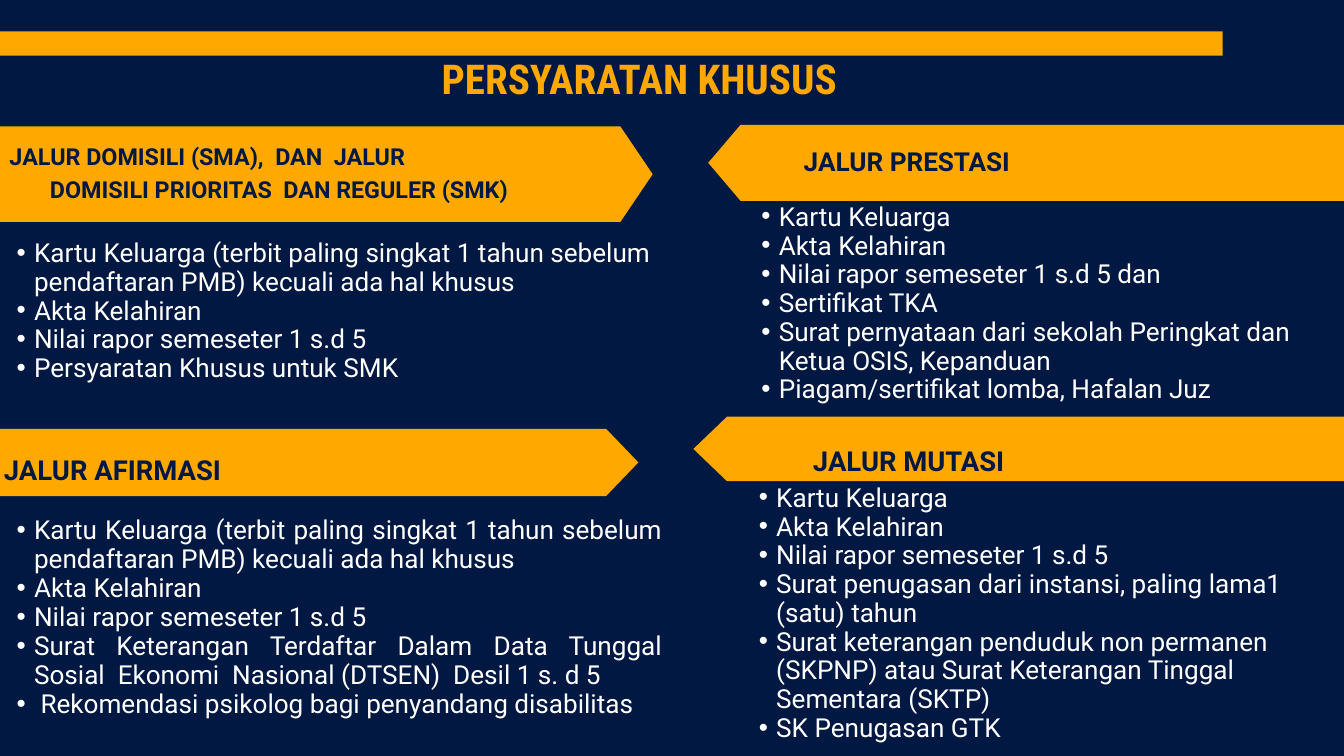
import pptx
import pptx.util
import pptx.dml.color
import pptx.enum.shapes
import pptx.enum.text
import pptx.oxml.ns
import lxml.etree

Cm, Pt = pptx.util.Cm, pptx.util.Pt
ALIGN = pptx.enum.text.PP_ALIGN
NAVY, AMBER, WHITE = "001842", "FFA800", "FFFFFF"
INDENT = 0.66


def rgb(color):
    return pptx.dml.color.RGBColor.from_string(color)


def paint(sp, color):
    sp.shadow.inherit = False
    sp.fill.solid()
    sp.fill.fore_color.rgb = rgb(color)
    sp.line.fill.background()


def prepare_frame(sp):
    tf = sp.text_frame
    tf.word_wrap = True
    tf.auto_size = pptx.enum.text.MSO_AUTO_SIZE.NONE
    tf.vertical_anchor = pptx.enum.text.MSO_ANCHOR.TOP
    tf.margin_left = tf.margin_top = tf.margin_right = tf.margin_bottom = 0
    return tf


def add_line(tf, index, text, size, spacing, color, font="Roboto", bold=False):
    p = tf.paragraphs[0] if index == 0 else tf.add_paragraph()
    p.alignment = ALIGN.LEFT
    p.line_spacing = Pt(spacing)
    p.space_before = Pt(0)
    r = p.add_run()
    r.text = text
    r.font.name, r.font.size, r.font.bold = font, Pt(size), bold
    r.font.color.rgb = rgb(color)
    return p


def set_indent(p, left, first):
    pPr = p._p.get_or_add_pPr()
    pPr.set("marL", str(Cm(left)))
    pPr.set("indent", str(Cm(first)))
    return pPr


def add_header(s, box, title_box):
    # Top bar
    bar = s.shapes.add_shape(pptx.enum.shapes.MSO_SHAPE.RECTANGLE, *map(Cm, box))
    paint(bar, AMBER)
    # Title
    title = s.shapes.title
    title.left, title.top, title.width, title.height = map(Cm, title_box)
    add_line(prepare_frame(title), 0, "PERSYARATAN KHUSUS", 44, 45.3, AMBER,
             "Roboto Condensed", True)


def add_banner(s, box, tip):
    x, y, w, h = box
    points = [(x + w - tip, y), (x + tip, y), (x, y + h / 2),
              (x + tip, y + h), (x + w - tip, y + h), (x + w, y + h / 2)]
    points = [(Cm(px), Cm(py)) for px, py in points]
    builder = s.shapes.build_freeform(*points[0], scale=1.0)
    builder.add_line_segments(points[1:], close=True)
    paint(builder.convert_to_shape(), AMBER)


def add_section(s, box, heading, heading_box, size, spacing, items, list_box,
                list_spacing=30.8, align=ALIGN.LEFT, tip=1.22):
    """Heading and list boxes are measured from the banner's top left."""
    x, y = box[:2]

    def text_frame(dx, dy, w, h):
        return prepare_frame(s.shapes.add_textbox(Cm(x + dx), Cm(y + dy), Cm(w), Cm(h)))

    add_banner(s, box, tip)
    # Heading, with any later line indented
    tf = text_frame(*heading_box)
    for i, text in enumerate(heading):
        p = add_line(tf, i, text, size, spacing, NAVY, bold=True)
        if i:
            set_indent(p, 1.53, 0)
    # Bulleted requirements
    tf = text_frame(*list_box)
    for i, text in enumerate(items):
        p = add_line(tf, i, text, 28, list_spacing, WHITE)
        p.alignment = align
        p.level = 1
        pPr = set_indent(p, 2 * INDENT, -INDENT)
        for tag, key, value in (("a:buFont", "typeface", "Arial"), ("a:buChar", "char", "•")):
            lxml.etree.SubElement(pPr, pptx.oxml.ns.qn(tag)).set(key, value)


CARD, BIRTH, GRADES = "Kartu Keluarga", "Akta Kelahiran", "Nilai rapor semeseter 1 s.d 5"
CARD_LONG = CARD + " (terbit paling singkat 1 tahun sebelum pendaftaran PMB) kecuali ada hal khusus"


def main():
    prs = pptx.Presentation()
    prs.slide_width, prs.slide_height = Cm(50.8), Cm(28.575)
    s = prs.slides.add_slide(prs.slide_layouts[5])
    s.background.fill.solid()
    s.background.fill.fore_color.rgb = rgb(NAVY)

    add_header(s, (-4.72, 1.19, 50.93, 0.91), (16.69, 2.29, 27.41, 1.68))

    # Left column
    add_section(s, (-6.45, 4.78, 31.12, 3.61),
                ["JALUR DOMISILI (SMA),  DAN  JALUR",
                 "DOMISILI PRIORITAS  DAN REGULER (SMK)"],
                (6.81, 0.43, 19.91, 2.41), 25, 35,
                [CARD_LONG, BIRTH, GRADES, "Persyaratan Khusus untuk SMK"],
                (6.42, 4.26, 25.43, 5.51))
    add_section(s, (-5.94, 16.21, 30.07, 2.54), ["JALUR AFIRMASI"],
                (6.09, 0.71, 19.43, 1.4), 29.4, 41.1,
                [CARD_LONG, BIRTH, GRADES,
                 "Surat Keterangan Terdaftar Dalam Data Tunggal "
                 "Sosial  Ekonomi  Nasional (DTSEN)  Desil 1 s. d 5",
                 " Rekomendasi psikolog bagi penyandang disabilitas"],
                (5.91, 3.3, 25.04, 8.69), 31, ALIGN.JUSTIFY)

    # Right column
    add_section(s, (26.77, 4.72, 28.12, 2.87), ["JALUR PRESTASI"],
                (3.61, 0.59, 18.57, 1.4), 28, 39.2,
                [CARD, BIRTH, GRADES + " dan", "Sertifikat TKA",
                 "Surat pernyataan dari sekolah Peringkat dan Ketua OSIS, Kepanduan",
                 "Piagam/sertifikat lomba, Hafalan Juz"],
                (1.35, 2.95, 22.78, 7.72))
    add_section(s, (26.21, 15.75, 28.24, 2.44), ["JALUR MUTASI"],
                (4.52, 0.84, 19.43, 1.4), 29.4, 41.1,
                [CARD, BIRTH, GRADES,
                 "Surat penugasan dari instansi, paling lama1 (satu) tahun",
                 "Surat keterangan penduduk non permanen (SKPNP) atau "
                 "Surat Keterangan Tinggal Sementara (SKTP)",
                 "SK Penugasan GTK"],
                (1.81, 2.54, 22.89, 9.93), tip=1.27)

    prs.save("out.pptx")


if __name__ == "__main__":
    main()
